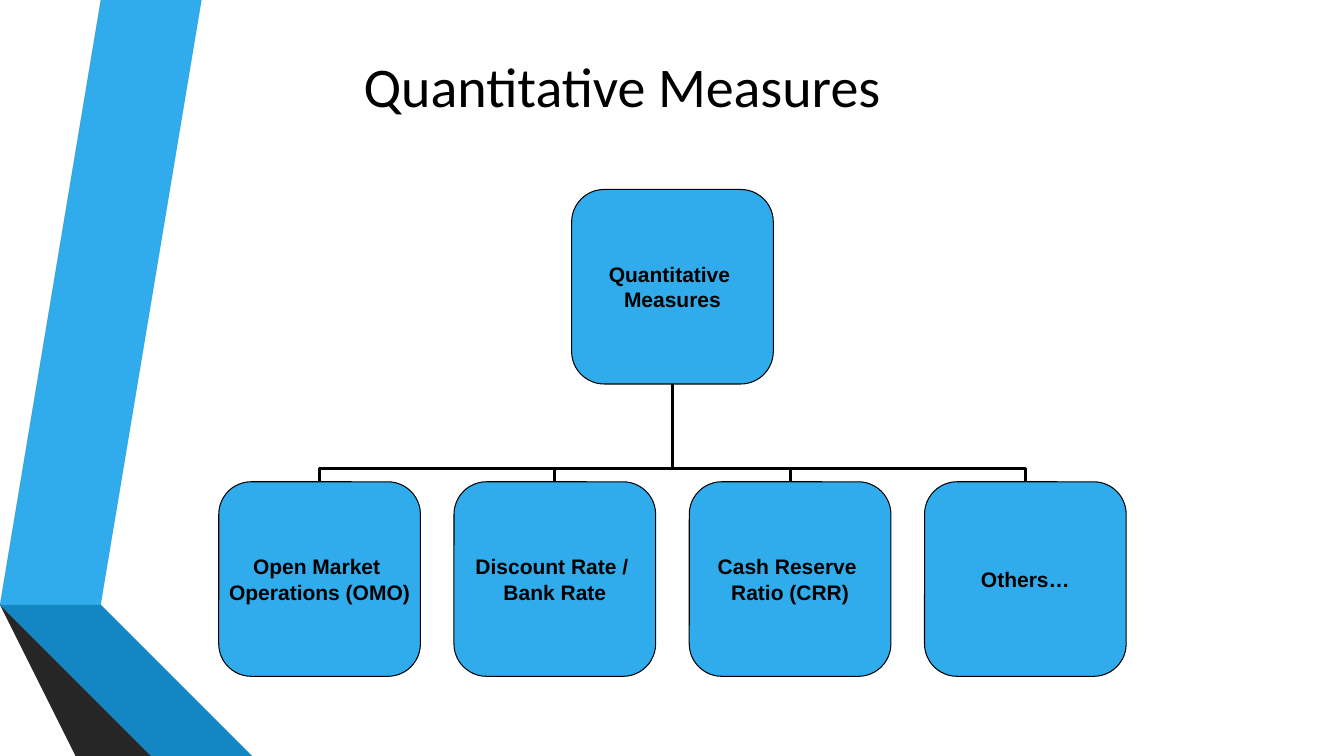
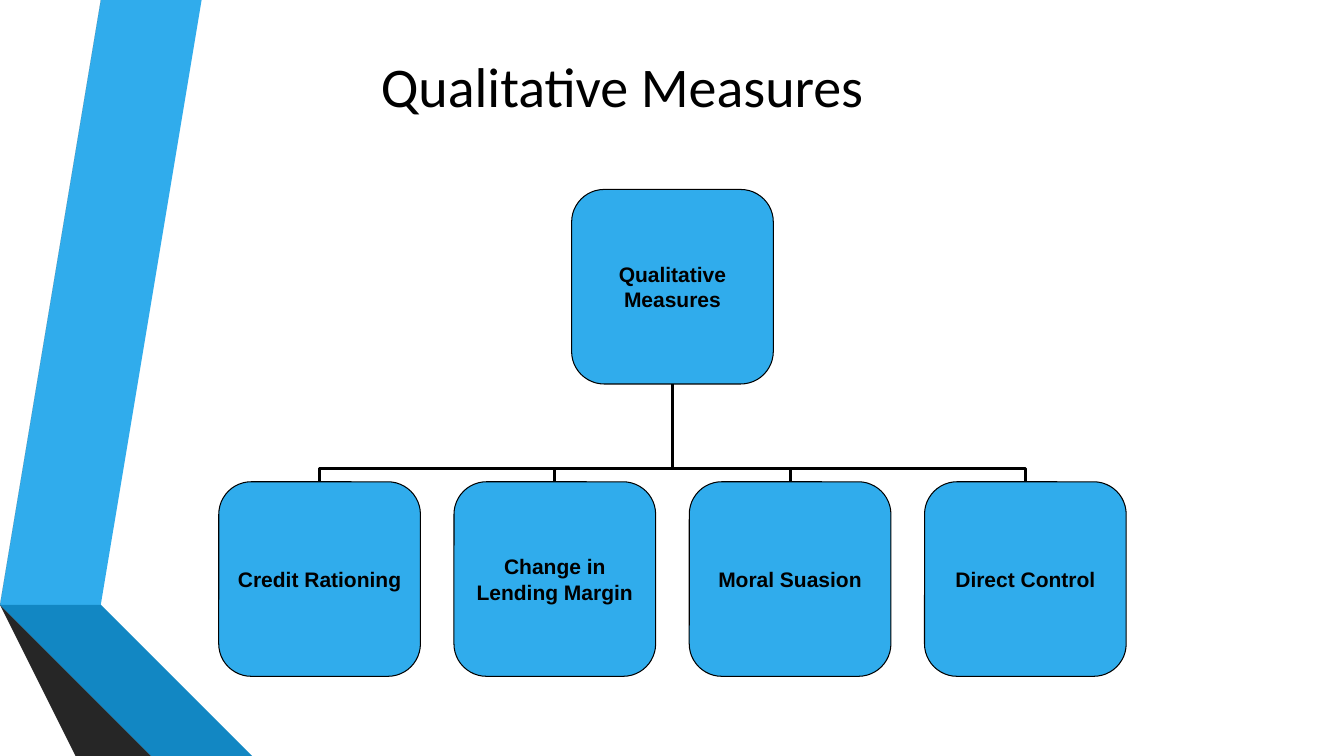
from lxml.etree import SubElement
from pptx import Presentation
from pptx.dml.color import RGBColor
from pptx.enum.shapes import MSO_CONNECTOR as CONNECTOR, MSO_SHAPE as SHAPE
from pptx.enum.text import MSO_ANCHOR as ANCHOR, PP_ALIGN as ALIGN
from pptx.oxml.ns import qn
from pptx.util import Inches, Pt

BLACK = RGBColor(0x00, 0x00, 0x00)
BLUE = RGBColor(0x30, 0xAC, 0xEC)
MID_BLUE = RGBColor(0x12, 0x87, 0xC3)
DEEP_BLUE = RGBColor(0x0C, 0x5A, 0x82)
GRAY = RGBColor(0x59, 0x59, 0x59)
DARK_GRAY = RGBColor(0x40, 0x40, 0x40)
CHARCOAL = RGBColor(0x26, 0x26, 0x26)

TITLE_BOX = (0.67, 0.13, 11, 1.42)
CHART_BOX = (2.17, 1.88, 9, 4.83)
NODE_WIDTH, NODE_HEIGHT = 2, 1.93
BUS_RISE = 0.13
TOP_SITE, BOTTOM_SITE = 0, 2

RIBBONS = [
    (BLUE, [(0.5, 5.78), (0.77, 5.83), (1.73, 0), (1.45, 0)]),
    (GRAY, [(1.39, 0), (1.11, 0), (0.16, 5.73), (0.44, 5.77)]),
    (CHARCOAL, [(0.16, 5.73), (1.45, 7.5), (1.51, 7.5)]),
    (DEEP_BLUE, [(0.5, 5.79), (2.08, 7.5), (2.14, 7.5)]),
    (MID_BLUE, [(0.5, 5.78), (2.14, 7.5), (2.83, 7.5), (0.77, 5.83)]),
    (DARK_GRAY, [(2.02, 7.5), (0.48, 5.83), (0.44, 5.77), (0.16, 5.73), (1.51, 7.5)]),
]

SLIDES = [
    ("Quantitative Measures", "Quantitative \nMeasures",
     ["Open Market \nOperations (OMO)", "Discount Rate / \nBank Rate",
      "Cash Reserve \nRatio (CRR)", "Others…"]),
    ("Qualitative Measures", "Qualitative\nMeasures",
     ["Credit Rationing", "Change in\nLending Margin", "Moral Suasion", "Direct Control"]),
]


def write_text(frame, text, font_name, size, bold=False):
    """Fill a text frame with centred black paragraphs, one per line."""
    frame.vertical_anchor = ANCHOR.MIDDLE
    frame.text = text
    for paragraph in frame.paragraphs:
        paragraph.alignment = ALIGN.CENTER
        font = paragraph.font
        font.name, font.size, font.bold = font_name, Pt(size), bold
        font.color.rgb = BLACK


def add_ribbons(slide):
    """Draw the folded ribbons along the left edge."""
    for color, points in RIBBONS:
        builder = slide.shapes.build_freeform(*points[0], scale=Inches(1))
        builder.add_line_segments(points[1:], close=True)
        shape = builder.convert_to_shape()
        shape.shadow.inherit = False
        shape.fill.solid()
        shape.fill.fore_color.rgb = color
        shape.line.fill.background()


def add_title(slide, box, text):
    """Place the slide title in its box."""
    frame = slide.shapes.add_textbox(*map(Inches, box)).text_frame
    frame.word_wrap = True
    write_text(frame, text, "Calibri", 40)


def add_node(slide, left, top, text):
    """Add one rounded box of the chart."""
    shape = slide.shapes.add_shape(SHAPE.ROUNDED_RECTANGLE, *map(
        Inches, (left, top, NODE_WIDTH, NODE_HEIGHT)))
    shape.adjustments[0] = 0.167
    shape.shadow.inherit = False
    shape.fill.solid()
    shape.fill.fore_color.rgb = BLUE
    shape.line.color.rgb = BLACK
    shape.line.width = Pt(0.75)
    frame = shape.text_frame
    frame.word_wrap = False
    frame.margin_left = frame.margin_right = frame.margin_top = frame.margin_bottom = 0
    write_text(frame, text, "Arial", 15, bold=True)
    return shape


def add_branch(slide, child, root):
    """Join the top of a child to the bottom of the root with a turned elbow."""
    child_x, root_x = (node.left + node.width // 2 for node in (child, root))
    root_bottom = root.top + root.height
    drop, span = child.top - root_bottom, abs(child_x - root_x)
    connector = slide.shapes.add_connector(
        CONNECTOR.ELBOW, child_x, child.top, root_x, root_bottom)
    connector.begin_connect(child, TOP_SITE)
    connector.end_connect(root, BOTTOM_SITE)
    connector.left = (child_x + root_x - drop) // 2
    connector.top = (child.top + root_bottom - span) // 2
    connector.width, connector.height = drop, span
    connector.line.color.rgb = BLACK
    connector.line.width = Pt(2.25)
    on_right = child_x > root_x
    properties = connector._element.spPr
    transform = properties.find(qn("a:xfrm"))
    transform.set("rot", str((90 if on_right else 270) * 60000))
    transform.set("flipH", str(int(on_right)))
    transform.set("flipV", "0")
    geometry = properties.find(qn("a:prstGeom"))
    guides = geometry.find(qn("a:avLst"))
    if guides is None:
        guides = SubElement(geometry, qn("a:avLst"))
    bend = round(Inches(BUS_RISE) / drop * 100000)
    SubElement(guides, qn("a:gd"), name="adj1", fmla=f"val {bend}")
    SubElement(properties, qn("a:effectLst"))


def add_tree(slide, box, root_text, child_texts):
    """Lay out a root centred above a row of evenly spaced children."""
    left, top, width, height = box
    pitch = (width - NODE_WIDTH) / (len(child_texts) - 1)
    root = add_node(slide, left + (width - NODE_WIDTH) / 2, top, root_text)
    for index, text in enumerate(child_texts):
        child = add_node(slide, left + index * pitch, top + height - NODE_HEIGHT, text)
        add_branch(slide, child, root)


def main():
    """Build and save the presentation."""
    presentation = Presentation()
    presentation.slide_width, presentation.slide_height = Inches(13.33), Inches(7.5)
    for title, root_text, child_texts in SLIDES:
        slide = presentation.slides.add_slide(presentation.slide_layouts[6])
        add_ribbons(slide)
        add_title(slide, TITLE_BOX, title)
        add_tree(slide, CHART_BOX, root_text, child_texts)
    presentation.save("out.pptx")


if __name__ == "__main__":
    main()
